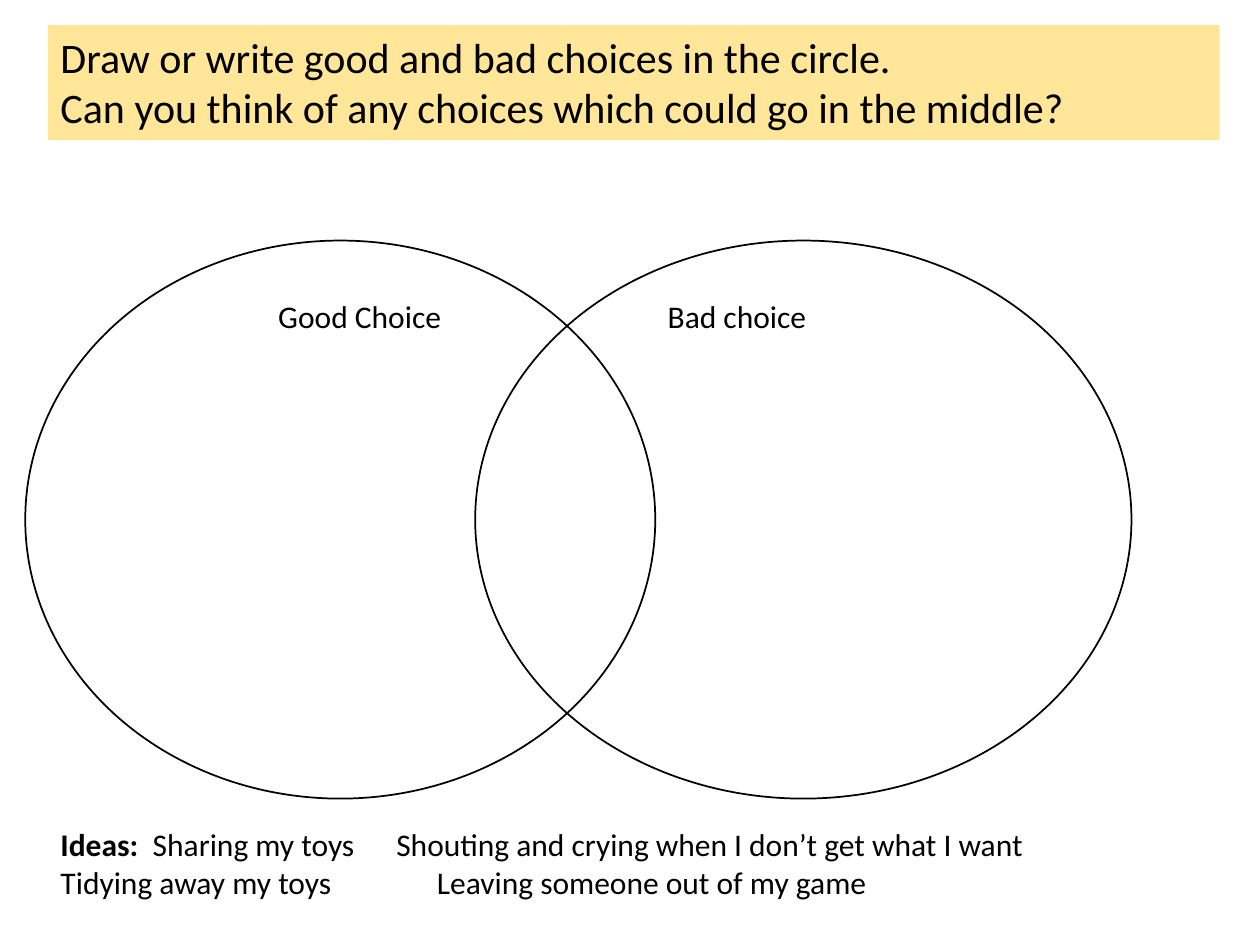
"""Build a Venn diagram slide for sorting good and bad choices."""
from lxml import etree
from pptx import Presentation
from pptx.dml.color import RGBColor
from pptx.enum.shapes import MSO_SHAPE
from pptx.enum.text import MSO_ANCHOR, PP_ALIGN
from pptx.oxml.ns import qn
from pptx.util import Cm, Pt

OVAL, RECTANGLE = MSO_SHAPE.OVAL, MSO_SHAPE.RECTANGLE
LEFT, TOP = PP_ALIGN.LEFT, MSO_ANCHOR.TOP
BLACK = RGBColor(0x00, 0x00, 0x00)
SAND = RGBColor(0xFF, 0xE6, 0x99)
FONT = "Calibri"

TASK = [
    "Draw or write good and bad choices in the circle.",
    "Can you think of any choices which could go in the middle?",
]
CIRCLES = [
    {"label": "Good Choice", "left": 0.51, "width": 12.7, "label_left": 5.36, "label_width": 3.86},
    {"label": "Bad choice", "left": 9.58, "width": 13.23, "label_left": 13.21, "label_width": 5.26},
]
IDEAS = [
    (["Ideas:", "Sharing my toys", "Shouting and crying when I don’t get what I want"], [1.86, 6.77]),
    (["Tidying away my toys", "Leaving someone out of my game"], [7.59]),
]
MARGIN = 0.97
CIRCLE_TOP, CIRCLE_HEIGHT = 4.85, 11.25
LABEL_TOP, LABEL_HEIGHT = 5.87, 1.02


def write(frame, lines, size):
    """Write one left-aligned paragraph per line."""
    frame.word_wrap = True
    frame.vertical_anchor = TOP
    frame.text = "\n".join(lines)
    for paragraph in frame.paragraphs:
        paragraph.alignment = LEFT
        for run in paragraph.runs:
            run.font.name, run.font.size = FONT, Pt(size)
            run.font.color.rgb = BLACK


def add_text(slide, box, lines, size=18):
    """Add a text box and return its frame."""
    frame = slide.shapes.add_textbox(*map(Cm, box)).text_frame
    write(frame, lines, size)
    return frame


def add_circle(slide, left, width):
    """Add an unfilled oval."""
    circle = slide.shapes.add_shape(OVAL, Cm(left), Cm(CIRCLE_TOP), Cm(width), Cm(CIRCLE_HEIGHT))
    circle.shadow.inherit = False
    circle.fill.background()
    circle.line.color.rgb = BLACK
    circle.line.width = Pt(1)


def add_task(slide):
    """Add the coloured instruction banner."""
    banner = slide.shapes.add_shape(RECTANGLE, Cm(MARGIN), Cm(0.51), Cm(23.62), Cm(2.31))
    banner.shadow.inherit = False
    banner.fill.solid()
    banner.fill.fore_color.rgb = SAND
    banner.line.fill.background()
    write(banner.text_frame, TASK, 24)


def add_ideas(slide):
    """Add the idea list with its columns set by tab stops."""
    lines = ["\t".join(ideas) for ideas, stops in IDEAS]
    frame = add_text(slide, (MARGIN, 16.51, 21.36, 1.8), lines)
    for paragraph, (ideas, stops) in zip(frame.paragraphs, IDEAS):
        tabs = etree.SubElement(paragraph._p.get_or_add_pPr(), qn("a:tabLst"))
        for stop in stops:
            etree.SubElement(tabs, qn("a:tab"), pos=str(Cm(stop)), algn="l")
    heading = frame.paragraphs[0].runs[0]
    rest = frame.paragraphs[0].add_run()
    heading.text, rest.text = IDEAS[0][0][0], "\t" + "\t".join(IDEAS[0][0][1:])
    rest.font.name, rest.font.size = FONT, heading.font.size
    rest.font.color.rgb = BLACK
    heading.font.bold = True


def main():
    """Create and save the slide."""
    deck = Presentation()
    deck.slide_width, deck.slide_height = Cm(25.4), Cm(19.05)
    slide = deck.slides.add_slide(deck.slide_layouts[6])
    for circle in CIRCLES:
        add_circle(slide, circle["left"], circle["width"])
    for circle in CIRCLES:
        box = (circle["label_left"], LABEL_TOP, circle["label_width"], LABEL_HEIGHT)
        add_text(slide, box, [circle["label"]])
    add_task(slide)
    add_ideas(slide)
    deck.save("out.pptx")


if __name__ == "__main__":
    main()
